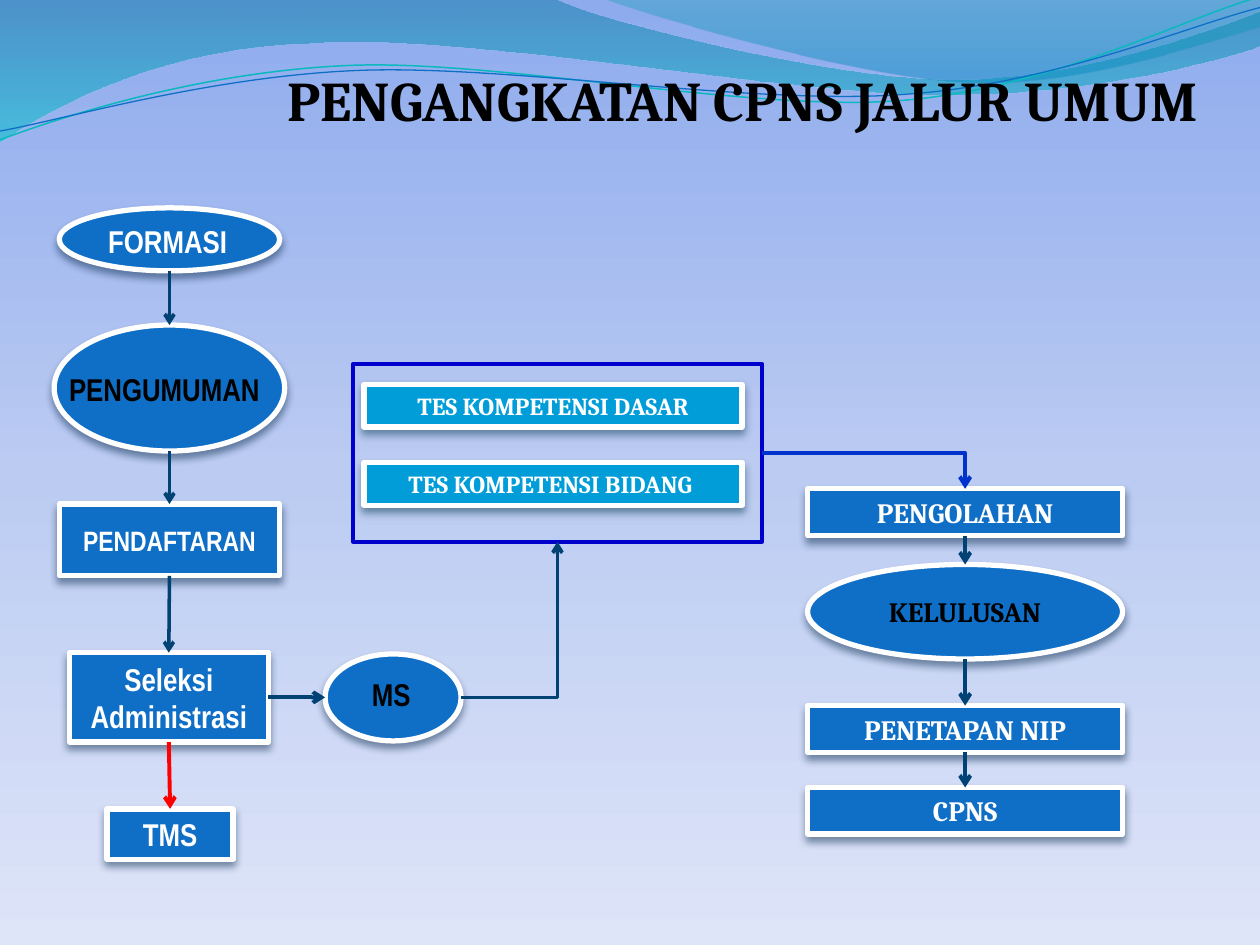
"""Build the slide showing the general-track CPNS appointment flow."""
from dataclasses import dataclass
from typing import Any, Optional

import pptx
import pptx.dml.color
import pptx.enum.shapes
import pptx.enum.text
import pptx.oxml.ns
import pptx.util
from lxml import etree

COLUMNS, ROWS = 10, 7.5
WIDTH, HEIGHT = pptx.util.Inches(10), pptx.util.Inches(7.5)
SHAPES = pptx.enum.shapes.MSO_SHAPE
LINES = pptx.enum.shapes.MSO_CONNECTOR
ALIGN = pptx.enum.text.PP_ALIGN
qn = pptx.oxml.ns.qn


@dataclass(frozen=True)
class Theme:
    sky: tuple = ((0, "8EABEE", 100), (50, "BBCBF2", 100), (100, "DEE5F8", 100))
    deep_wave: tuple = ((0, "0074A1", 45), (100, "00C6CF", 55))
    pale_wave: tuple = ((0, "00A1A9", 30), (80, "008BBF", 45))
    blue: str = "0F6FC6"
    cyan: str = "009DD9"
    teal: str = "0AB8BF"
    navy: str = "004274"
    red: str = "FF0000"
    frame: str = "0000CC"
    royal: str = "0033CC"
    white: str = "FFFFFF"
    black: str = "000000"
    serif: str = "Cambria"
    narrow: str = "Arial Narrow"
    title: int = 32
    large: int = 18
    medium: int = 16
    small: int = 14


THEME = Theme()


@dataclass(frozen=True)
class Stage:
    label: str
    area: tuple
    font: str = THEME.narrow
    size: int = THEME.large
    ink: str = THEME.white
    oval: bool = False
    fill: str = THEME.blue
    caption: Optional[tuple] = None
    align: Any = ALIGN.CENTER


@dataclass(frozen=True)
class Wave:
    start: tuple
    steps: tuple
    gradient: Optional[tuple] = None
    colour: str = THEME.blue
    weight: float = 0.75


@dataclass(frozen=True)
class Link:
    source: str
    target: str
    leave: int = 2
    arrive: int = 0
    colour: str = THEME.navy
    weight: float = 2.25
    elbow: bool = False


RESULT = dict(font=THEME.serif, size=THEME.medium)
TEST = dict(font=THEME.serif, size=THEME.small, fill=THEME.cyan)
STAGES = (
    Stage("PENGUMUMAN", (0.43, 2.58, 1.83, 1), ink=THEME.black, oval=True,
          caption=(0.39, 2.89, 1.83, 0.4)),
    Stage("FORMASI", (0.47, 1.65, 1.75, 0.5), oval=True,
          caption=(0.76, 1.71, 1.25, 0.4), align=ALIGN.LEFT),
    Stage("TMS", (0.85, 6.42, 1, 0.4)),
    Stage("PENDAFTARAN", (0.47, 4, 1.75, 0.57), size=THEME.medium),
    Stage("Seleksi Administrasi", (0.55, 5.18, 1.58, 0.71)),
    Stage("MS", (2.58, 5.19, 1.08, 0.69), ink=THEME.black, oval=True,
          caption=(2.73, 5.31, 0.75, 0.4)),
    Stage("TES KOMPETENSI DASAR", (2.89, 3.05, 3, 0.34), **TEST),
    Stage("TES KOMPETENSI BIDANG ", (2.89, 3.67, 3, 0.34), **TEST),
    Stage("", (2.8, 2.89, 3.25, 1.41)),
    Stage("PENGOLAHAN", (6.41, 3.88, 2.5, 0.37), **RESULT),
    Stage("PENETAPAN NIP", (6.41, 5.6, 2.5, 0.37), **RESULT),
    Stage("CPNS", (6.41, 6.25, 2.5, 0.37), **RESULT),
    Stage("KELULUSAN", (6.41, 4.48, 2.5, 0.75), ink=THEME.black, oval=True, **RESULT),
)
LINKS = (
    Link("FORMASI", "PENGUMUMAN", weight=2),
    Link("PENGUMUMAN", "PENDAFTARAN", weight=2),
    Link("PENDAFTARAN", "Seleksi Administrasi", weight=2),
    Link("Seleksi Administrasi", "TMS", colour=THEME.red),
    Link("Seleksi Administrasi", "MS", 3, 1),
    Link("MS", "", 3, 2, weight=2, elbow=True),
    Link("PENGOLAHAN", "KELULUSAN"),
    Link("KELULUSAN", "PENETAPAN NIP"),
    Link("PENETAPAN NIP", "CPNS"),
    Link("", "PENGOLAHAN", 3, 0, THEME.royal, elbow=True),
)
WAVES = (
    Wave((0, 0), ((4.4, -0.01), (4.76, 0.17, 6.64, 0.63, 7.58, 0.63),
                  (8.53, 0.63, 9.58, 0.26, 10, 0.09), (10.01, 0.36),
                  (9.83, 0.44, 8.7, 0.76, 7.46, 0.75), (6.22, 0.75, 3.82, 0.28, 2.57, 0.34),
                  (1.29, 0.36, 0.46, 0.83, -0.01, 1.13), (0, 0)), THEME.deep_wave),
    Wave((4.79, -0.01), ((5.09, 0.11, 6.82, 0.62, 7.69, 0.65),
                         (8.56, 0.69, 9.61, 0.32, 10, 0.21), (10, 0), (4.79, -0.01)),
         THEME.pale_wave),
    Wave((0, 1.11), ((0.48, 0.93, 1.58, 0.57, 2.77, 0.52), (3.95, 0.47, 5.93, 0.89, 7.13, 0.8),
                     (8.33, 0.71, 9.38, 0.15, 9.98, -0.02)), colour=THEME.teal, weight=0.85),
    Wave((0, 1.04), ((0.47, 0.96, 1.64, 0.61, 2.83, 0.56), (4.03, 0.51, 5.97, 0.84, 7.17, 0.75),
                     (8.36, 0.67, 9.41, 0.21, 10, 0.06))),
)


def place(*grid: float) -> list:
    return [int((HEIGHT / ROWS if i % 2 else WIDTH / COLUMNS) * n) for i, n in enumerate(grid)]


def assign(target: Any, values: dict) -> None:
    for key, value in values.items():
        setattr(target, key, value)


def stroke(line: Any, colour: str, weight: float) -> None:
    line.color.rgb = pptx.dml.color.RGBColor.from_string(colour)
    line.width = pptx.util.Pt(weight)


def tint(parent: Any, colour: str, **changes: int) -> None:
    base = etree.SubElement(parent, qn("a:srgbClr"), val=colour)
    for change, percent in changes.items():
        etree.SubElement(base, qn("a:" + change), val=str(percent * 1000))


def shade(fill: Any, element: Any, stops: tuple) -> None:
    fill.gradient()
    fill.gradient_angle = 270
    ramp = next(element.iter(qn("a:gsLst")))
    for stop in list(ramp):
        ramp.remove(stop)
    for position, colour, opacity in stops:
        tint(etree.SubElement(ramp, qn("a:gs"), pos=str(position * 1000)), colour, alpha=opacity)


def write(frame: Any, text: str, font: str, size: int, ink: str, align: Any) -> None:
    assign(frame, dict(text=text, word_wrap=True, margin_top=0, margin_bottom=0,
                       vertical_anchor=pptx.enum.text.MSO_ANCHOR.MIDDLE))
    frame.paragraphs[0].alignment = align
    face = frame.paragraphs[0].runs[0].font
    assign(face, dict(name=font, size=pptx.util.Pt(size), bold=True))
    face.color.rgb = pptx.dml.color.RGBColor.from_string(ink)


def draw_wave(slide: Any, wave: Wave) -> None:
    outline = slide.shapes.build_freeform(*place(*wave.start))
    points = [place(*step[i:i + 2]) for step in wave.steps for i in range(0, len(step), 2)]
    outline.add_line_segments(points, close=bool(wave.gradient))
    band = outline.convert_to_shape()
    band.shadow.inherit = False
    corners = iter(list(band._element.iter(qn("a:lnTo"))))
    for step in wave.steps:
        first = next(corners)
        if len(step) == 6:
            first.tag_name = curve = etree.Element(qn("a:cubicBezTo"))
            first.addprevious(curve)
            for corner in (first, next(corners), next(corners)):
                curve.append(corner[0])
                corner.getparent().remove(corner)
    if wave.gradient:
        shade(band.fill, band._element, wave.gradient)
        band.line.fill.background()
    else:
        band.fill.background()
        stroke(band.line, wave.colour, wave.weight)


def draw_stage(slide: Any, stage: Stage) -> Any:
    box = slide.shapes.add_shape(SHAPES.OVAL if stage.oval else SHAPES.RECTANGLE,
                                 *place(*stage.area))
    box.shadow.inherit = False
    if not stage.label:
        box.fill.background()
        stroke(box.line, THEME.frame, 2)
        return box
    box.fill.solid()
    box.fill.fore_color.rgb = pptx.dml.color.RGBColor.from_string(stage.fill)
    stroke(box.line, THEME.white, 3)
    cast = etree.SubElement(box._element.spPr.find(qn("a:effectLst")), qn("a:outerShdw"),
                            blurRad="57150", dist="38100", dir="5400000", rotWithShape="0")
    tint(cast, stage.fill, shade=9, satMod=105, alpha=48)
    holder = slide.shapes.add_textbox(*place(*stage.caption)) if stage.caption else box
    write(holder.text_frame, stage.label, stage.font, stage.size, stage.ink, stage.align)
    return box


def side(box: Any, index: int) -> tuple:
    across, down = ((0.5, 0), (0, 0.5), (0.5, 1), (1, 0.5))[index]
    return int(box.left + box.width * across), int(box.top + box.height * down)


def draw_link(slide: Any, link: Link, boxes: dict) -> None:
    source, target = boxes[link.source], boxes[link.target]
    arrow = slide.shapes.add_connector(LINES.ELBOW if link.elbow else LINES.STRAIGHT,
                                       *side(source, link.leave), *side(target, link.arrive))
    properties = arrow._element.spPr
    if link.elbow:
        properties.find(qn("a:prstGeom")).set("prst", "bentConnector2")
    else:
        if source.auto_shape_type == SHAPES.RECTANGLE:
            arrow.begin_connect(source, link.leave)
        if target.auto_shape_type == SHAPES.RECTANGLE:
            arrow.end_connect(target, link.arrive)
    stroke(arrow.line, link.colour, link.weight)
    etree.SubElement(properties.find(qn("a:ln")), qn("a:tailEnd"), type="arrow")
    etree.SubElement(properties, qn("a:effectLst"))


def main() -> None:
    deck = pptx.Presentation()
    assign(deck, dict(slide_width=WIDTH, slide_height=HEIGHT))
    slide = deck.slides.add_slide(deck.slide_layouts[5])
    shade(slide.background.fill, slide._element, THEME.sky)
    for wave in WAVES:
        draw_wave(slide, wave)
    heading = slide.shapes.title
    slide.shapes._spTree.append(heading._element)
    assign(heading, dict(zip(("left", "top", "width", "height"), place(0.8, 0.47, 8.81, 0.64))))
    write(heading.text_frame, "PENGANGKATAN CPNS JALUR UMUM", THEME.serif, THEME.title,
          THEME.black, ALIGN.RIGHT)
    boxes = {stage.label: draw_stage(slide, stage) for stage in STAGES}
    for link in LINKS:
        draw_link(slide, link, boxes)
    deck.save("out.pptx")


if __name__ == "__main__":
    main()
